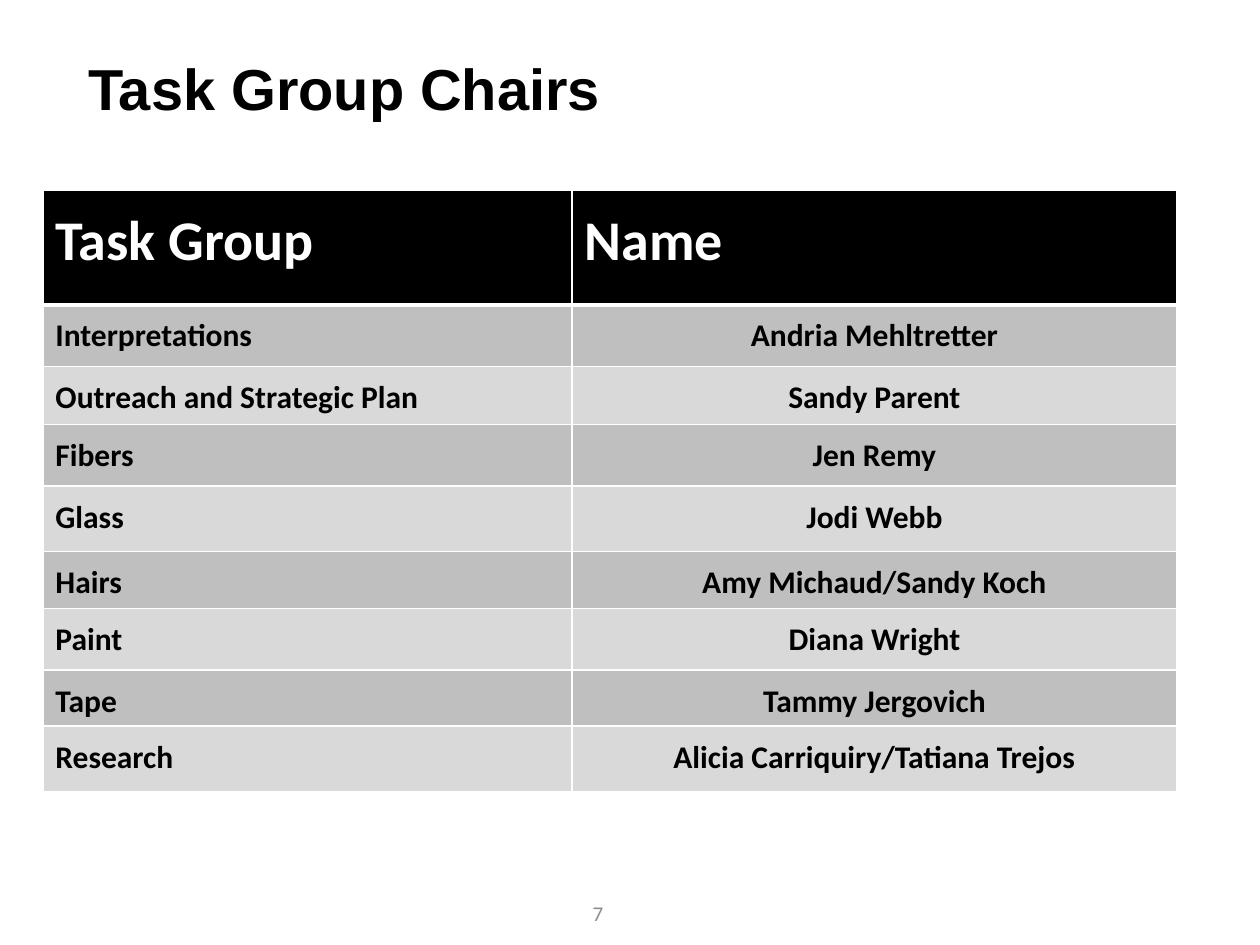
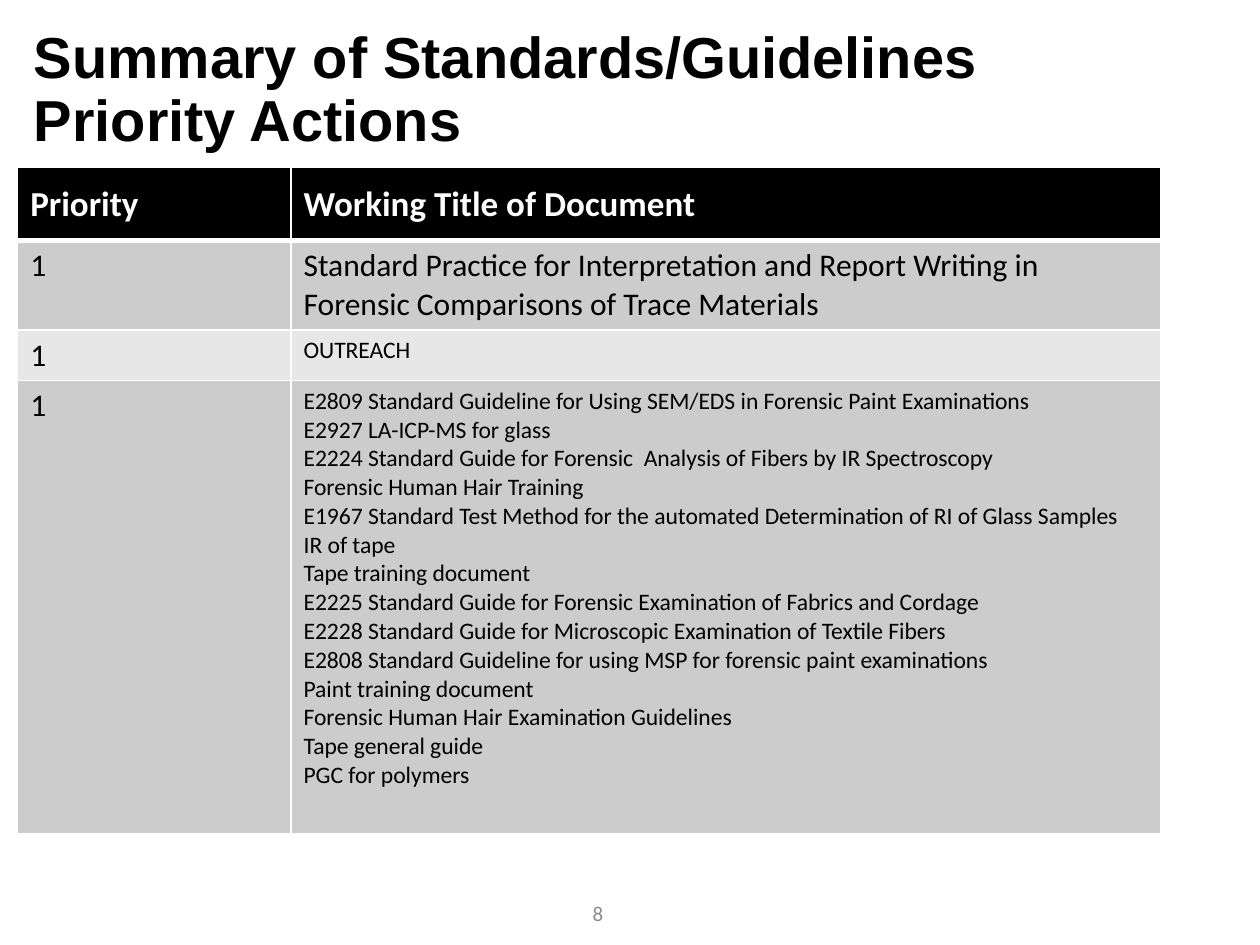
from dataclasses import dataclass

from lxml import etree
from pptx import Presentation
from pptx.dml.color import RGBColor
from pptx.enum.text import MSO_ANCHOR, PP_ALIGN
from pptx.oxml.ns import qn
from pptx.util import Inches, Pt

LEFT, CENTER = PP_ALIGN.LEFT, PP_ALIGN.CENTER
TOP, MIDDLE = MSO_ANCHOR.TOP, MSO_ANCHOR.MIDDLE
BLACK, WHITE, GRAY = "000000", "FFFFFF", "8C8C8C"
HEAD_FONT, BODY_FONT = "Arial", "Calibri"
THIN, THICK = 1, 3
TITLE_WIDTH, TITLE_HEIGHT = 8.62, 1.45
NUMBER_BOX = (3.62, 7.05, 2.25, 0.4)


@dataclass(frozen=True)
class TextStyle:
    size: float
    color: str = BLACK
    bold: bool = False
    font: str = BODY_FONT
    align: PP_ALIGN = LEFT
    spacing: float = 1.0


@dataclass(frozen=True)
class TableDesign:
    left: float
    top: float
    col_widths: tuple
    row_heights: tuple
    bands: tuple
    header_anchor: MSO_ANCHOR


TITLE = TextStyle(33, bold=True, font=HEAD_FONT, spacing=0.9)
NUMBER = TextStyle(12, GRAY, align=CENTER)

CHAIR_HEADER = TextStyle(32, WHITE, True, spacing=1.15)
CHAIR_GROUP = TextStyle(18, bold=True, spacing=1.15)
CHAIR_NAME = TextStyle(18, bold=True, align=CENTER, spacing=1.15)
CHAIR_TABLE = TableDesign(
    0.34, 1.51, (4.2, 4.8),
    (0.91, 0.49, 0.46, 0.49, 0.52, 0.45, 0.49, 0.43, 0.52),
    ("BFBFBF", "D9D9D9"), TOP)
CHAIRS = [
    ("Interpretations", "Andria Mehltretter"),
    ("Outreach and Strategic Plan", "Sandy Parent"),
    ("Fibers", "Jen Remy"),
    ("Glass", "Jodi Webb"),
    ("Hairs", "Amy Michaud/Sandy Koch"),
    ("Paint", "Diana Wright"),
    ("Tape", "Tammy Jergovich"),
    ("Research", "Alicia Carriquiry/Tatiana Trejos"),
]

PRIORITY_HEADER = TextStyle(20, WHITE, True)
PRIORITY_TEXT = TextStyle(18)
DOCUMENT_TEXT = TextStyle(13.5)
PRIORITY_TABLE = TableDesign(
    0.14, 1.33, (2.17, 6.9), (0.58, 0.71, 0.4, 3.6),
    ("CCCCCC", "E7E7E7"), MIDDLE)
INTERPRETATION = ("Standard Practice for Interpretation and Report Writing in "
                  "Forensic Comparisons of Trace Materials")
DOCUMENTS = "\n".join([
    "E2809 Standard Guideline for Using SEM/EDS in Forensic Paint Examinations",
    "E2927 LA-ICP-MS for glass",
    "E2224 Standard Guide for Forensic  Analysis of Fibers by IR Spectroscopy",
    "Forensic Human Hair Training",
    "E1967 Standard Test Method for the automated Determination of RI of Glass Samples",
    "IR of tape",
    "Tape training document",
    "E2225 Standard Guide for Forensic Examination of Fabrics and Cordage",
    "E2228 Standard Guide for Microscopic Examination of Textile Fibers",
    "E2808 Standard Guideline for using MSP for forensic paint examinations",
    "Paint training document",
    "Forensic Human Hair Examination Guidelines",
    "Tape general guide",
    "PGC for polymers",
])


def rgb(color: str) -> RGBColor:
    return RGBColor.from_string(color)


def write(tf, text: str, style: TextStyle) -> None:
    tf.word_wrap = True
    tf.text = text
    formats = {"name": style.font, "size": Pt(style.size), "bold": style.bold}
    for p in tf.paragraphs:
        p.alignment = style.align
        p.line_spacing = style.spacing
        for r in p.runs:
            for name, value in formats.items():
                setattr(r.font, name, value)
            r.font.color.rgb = rgb(style.color)


def add_text(s, box: tuple, text: str, style: TextStyle) -> None:
    tf = s.shapes.add_textbox(*map(Inches, box)).text_frame
    tf.vertical_anchor = MIDDLE
    write(tf, text, style)


def set_borders(cell, top: int, bottom: int) -> None:
    tc_pr = cell._tc.get_or_add_tcPr()
    widths = {"lnL": THIN, "lnR": THIN, "lnT": top, "lnB": bottom}
    for tag, width in widths.items():
        ln = etree.SubElement(tc_pr, qn(f"a:{tag}"), w=str(Pt(width)))
        fill = etree.SubElement(ln, qn("a:solidFill"))
        etree.SubElement(fill, qn("a:srgbClr"), val=WHITE)


def add_table(s, design: TableDesign, rows: list) -> None:
    size = (sum(design.col_widths), sum(design.row_heights))
    frame = s.shapes.add_table(len(rows), len(design.col_widths),
                               *map(Inches, (design.left, design.top, *size)))
    table = frame.table
    table.horz_banding = False
    for column, width in zip(table.columns, design.col_widths):
        column.width = Inches(width)
    for i, (row, height) in enumerate(zip(rows, design.row_heights)):
        table.rows[i].height = Inches(height)
        for j, (text, style) in enumerate(row):
            cell = table.cell(i, j)
            set_borders(cell, THICK if i == 1 else THIN, THICK if i == 0 else THIN)
            cell.fill.solid()
            cell.fill.fore_color.rgb = rgb(design.bands[(i - 1) % 2] if i else BLACK)
            cell.vertical_anchor = TOP if i else design.header_anchor
            write(cell.text_frame, text, style)


def add_slide(prs, title: str, title_left: float, number: int,
              design: TableDesign, rows: list) -> None:
    s = prs.slides.add_slide(prs.slide_layouts[6])
    add_text(s, (title_left, 0, TITLE_WIDTH, TITLE_HEIGHT), title, TITLE)
    add_table(s, design, rows)
    add_text(s, NUMBER_BOX, str(number), NUMBER)


def main() -> None:
    prs = Presentation()
    prs.slide_width, prs.slide_height = Inches(10), Inches(7.5)

    chair_rows = [[("Task Group", CHAIR_HEADER), ("Name", CHAIR_HEADER)]]
    chair_rows += [[(group, CHAIR_GROUP), (name, CHAIR_NAME)] for group, name in CHAIRS]
    add_slide(prs, "Task Group Chairs", 0.6, 7, CHAIR_TABLE, chair_rows)

    priority = ("1", PRIORITY_TEXT)
    priority_rows = [
        [("Priority", PRIORITY_HEADER), ("Working Title of Document", PRIORITY_HEADER)],
        [priority, (INTERPRETATION, PRIORITY_TEXT)],
        [priority, ("OUTREACH", DOCUMENT_TEXT)],
        [priority, (DOCUMENTS, DOCUMENT_TEXT)],
    ]
    add_slide(prs, "Summary of Standards/Guidelines Priority Actions", 0.17, 8,
              PRIORITY_TABLE, priority_rows)

    prs.save("out.pptx")


if __name__ == "__main__":
    main()
